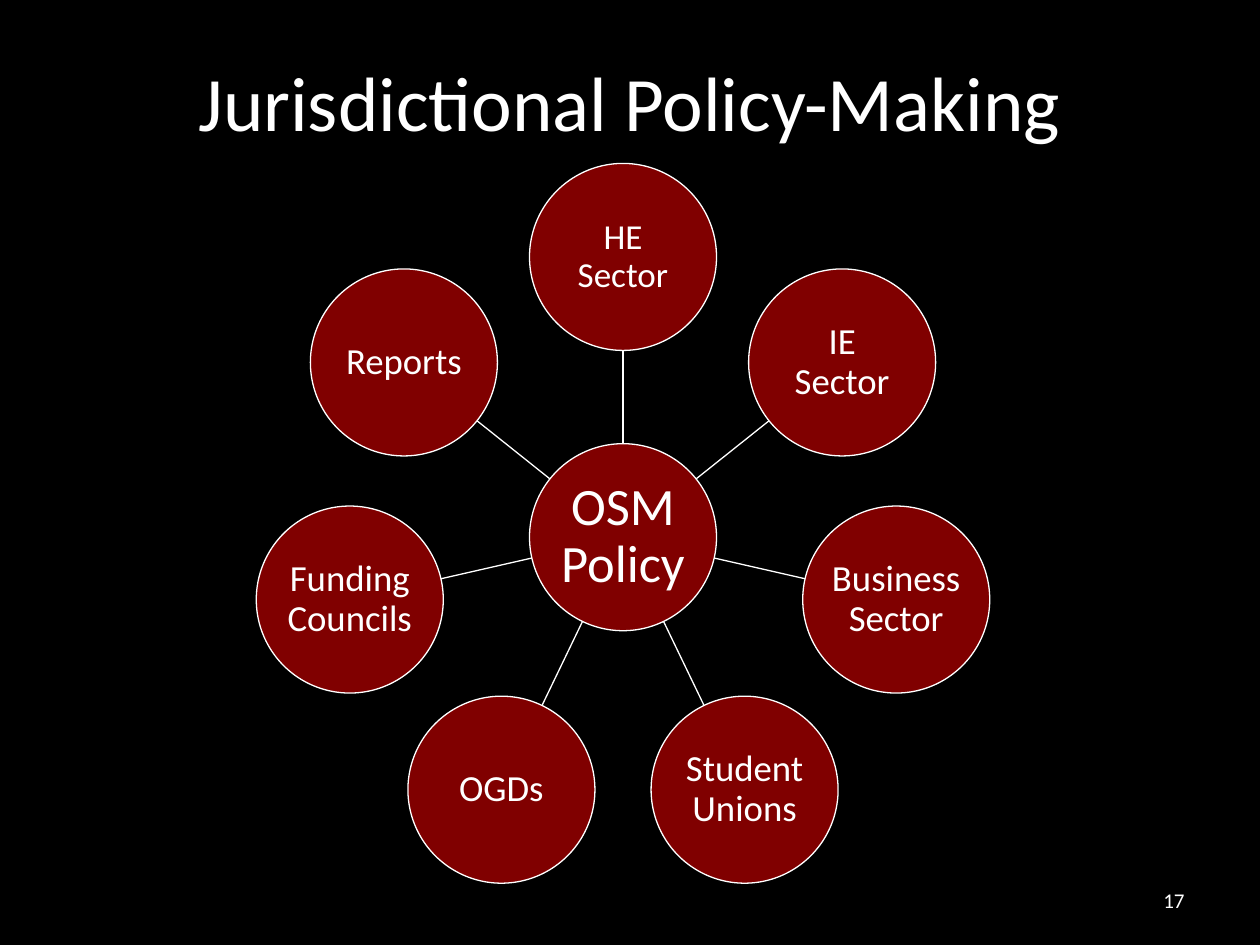
import math

import pptx
import pptx.util
import pptx.dml.color
import pptx.enum.shapes
import pptx.enum.text
import pptx.oxml.ns
import lxml.etree

Cm = pptx.util.Cm
Pt = pptx.util.Pt
ALIGN = pptx.enum.text.PP_ALIGN
MIDDLE = pptx.enum.text.MSO_ANCHOR.MIDDLE

COLOURS = {"background": "000000", "circle": "800000", "light": "FFFFFF"}
HUB_X, HUB_Y = 12.56, 10.83
DIAMETER = 3.77
ORBIT = 5.65
INFLUENCES = [
    ("HE Sector", 20),
    ("IE Sector", 21),
    ("Business Sector", 21),
    ("Student Unions", 21),
    ("OGDs", 21),
    ("Funding Councils", 21),
    ("Reports", 21),
]


def colour(name):
    return pptx.dml.color.RGBColor.from_string(COLOURS[name])


def write(frame, text, size, align):
    frame.word_wrap = True
    frame.vertical_anchor = MIDDLE
    paragraph = frame.paragraphs[0]
    paragraph.text = text
    paragraph.alignment = align
    paragraph.font.name = "Calibri"
    paragraph.font.size = Pt(size)
    paragraph.font.color.rgb = colour("light")
    return paragraph


def add_title(slide, text):
    title = slide.shapes.title
    title.left, title.top = Cm(1.27), Cm(0.76)
    title.width, title.height = Cm(22.86), Cm(2.54)
    write(title.text_frame, text, 44, ALIGN.CENTER)


def outline(line):
    line.color.rgb = colour("light")
    line.width = Pt(0.75)


def orbit_point(angle, distance):
    return HUB_X + distance * math.sin(angle), HUB_Y - distance * math.cos(angle)


def add_circle(slide, centre, text, size):
    x, y = centre
    circle = slide.shapes.add_shape(
        pptx.enum.shapes.MSO_SHAPE.OVAL,
        Cm(x - DIAMETER / 2), Cm(y - DIAMETER / 2), Cm(DIAMETER), Cm(DIAMETER))
    circle.shadow.inherit = False
    circle.fill.solid()
    circle.fill.fore_color.rgb = colour("circle")
    outline(circle.line)
    frame = circle.text_frame
    frame.margin_left = frame.margin_right = Cm(0.03)
    frame.margin_top = frame.margin_bottom = Cm(0.03)
    write(frame, text, size, ALIGN.CENTER).line_spacing = 0.9


def add_spoke(slide, angle):
    start = orbit_point(angle, DIAMETER / 2)
    end = orbit_point(angle, ORBIT - DIAMETER / 2)
    spoke = slide.shapes.add_connector(
        pptx.enum.shapes.MSO_CONNECTOR.STRAIGHT, *map(Cm, start + end))
    outline(spoke.line)
    lxml.etree.SubElement(spoke._element.spPr, pptx.oxml.ns.qn("a:effectLst"))


def add_page_number(slide, number):
    page = slide.shapes.add_textbox(Cm(18.21), Cm(17.65), Cm(5.92), Cm(1.01))
    write(page.text_frame, number, 12, ALIGN.RIGHT)


def main():
    deck = pptx.Presentation()
    deck.slide_width, deck.slide_height = Cm(25.4), Cm(19.05)
    slide = deck.slides.add_slide(deck.slide_layouts[5])
    slide.background.fill.solid()
    slide.background.fill.fore_color.rgb = colour("background")
    add_title(slide, "Jurisdictional Policy-Making")
    add_circle(slide, (HUB_X, HUB_Y), "OSM Policy", 30)
    for index, (influence, size) in enumerate(INFLUENCES):
        angle = math.tau * index / len(INFLUENCES)
        add_spoke(slide, angle)
        add_circle(slide, orbit_point(angle, ORBIT), influence, size)
    add_page_number(slide, "17")
    deck.save("out.pptx")


if __name__ == "__main__":
    main()
